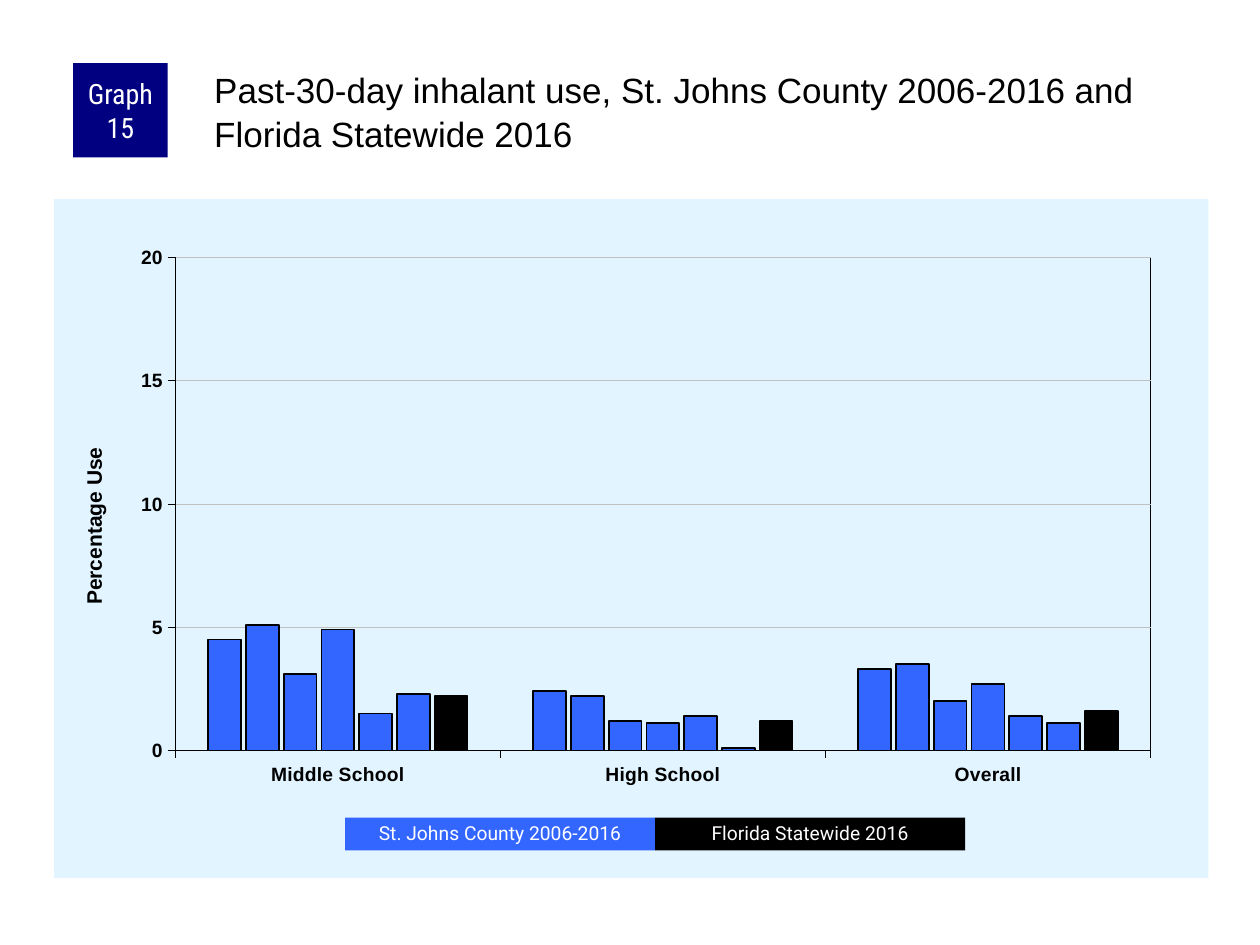
from lxml.etree import fromstring
from pptx import Presentation
from pptx.chart.data import CategoryChartData
from pptx.dml.color import RGBColor
from pptx.enum.chart import XL_CHART_TYPE, XL_TICK_MARK
from pptx.enum.shapes import MSO_SHAPE
from pptx.enum.text import MSO_ANCHOR, PP_ALIGN
from pptx.oxml.ns import nsdecls, qn
from pptx.util import Inches, Pt

BLACK = RGBColor(0, 0, 0)
WHITE = RGBColor(255, 255, 255)
NAVY = RGBColor(0, 0, 0x80)
BLUE = RGBColor(0x33, 0x66, 0xFF)
PALE_BLUE = RGBColor(0xE1, 0xF4, 0xFF)
GREY = RGBColor(0xC0, 0xC0, 0xC0)

TITLE = "Past-30-day inhalant use, St. Johns County 2006-2016 and Florida Statewide 2016"
LEVELS = ["Middle School", "High School", "Overall"]
USE = [
    (4.5, 2.4, 3.3),
    (5.1, 2.2, 3.5),
    (3.1, 1.2, 2.0),
    (4.9, 1.1, 2.7),
    (1.5, 1.4, 1.4),
    (2.3, 0.1, 1.1),
    (2.2, 1.2, 1.6),
]
COLORS = [BLUE] * 6 + [BLACK]
LEGEND = [("St. Johns County 2006-2016", BLUE), ("Florida Statewide 2016", BLACK)]
KEY_LEFT, KEY_WIDTH = 2.74, 2.46


def add_label(slide, text, box, color, font_name, size):
    label = slide.shapes.add_shape(MSO_SHAPE.RECTANGLE, *map(Inches, box))
    label.shadow.inherit = False
    label.fill.solid()
    label.fill.fore_color.rgb = color
    label.line.fill.background()
    frame = label.text_frame
    frame.word_wrap = True
    frame.vertical_anchor = MSO_ANCHOR.MIDDLE
    frame.margin_left = frame.margin_right = Inches(0.05)
    frame.margin_top = frame.margin_bottom = 0
    paragraph = frame.paragraphs[0]
    paragraph.text = text
    paragraph.alignment = PP_ALIGN.CENTER
    set_font(paragraph.font, font_name, size, WHITE)
    return paragraph


def set_font(font, name, size, color=BLACK, bold=False):
    font.name, font.size, font.bold = name, Pt(size), bold
    font.color.rgb = color


def set_line(line, color, width):
    line.color.rgb = color
    line.width = Pt(width)


def set_layout(parent, index, **places):
    """Place a chart part by fractions of the chart's size."""
    old = parent.find(qn("c:layout"))
    if old is not None:
        parent.remove(old)
    target = '<c:layoutTarget val="inner"/>' if "w" in places else ""
    modes = "".join(f'<c:{key}Mode val="edge"/>' for key in "xy")
    values = "".join(f'<c:{key} val="{value}"/>' for key, value in places.items())
    parent.insert(index, fromstring(
        f'<c:layout {nsdecls("c")}><c:manualLayout>{target}{modes}{values}'
        "</c:manualLayout></c:layout>"))


def area_format(fill, line):
    return fromstring(f'<c:spPr {nsdecls("c", "a")}>{fill}{line}</c:spPr>')


def solid(color):
    return f'<a:solidFill><a:srgbClr val="{color}"/></a:solidFill>'


def add_use_chart(slide):
    data = CategoryChartData(number_format="0.0")
    data.categories = LEVELS
    for number, values in enumerate(USE, 1):
        data.add_series(f"Series {number}", values)
    box = map(Inches, (0.43, 1.58, 9.16, 5.39))
    chart = slide.shapes.add_chart(XL_CHART_TYPE.COLUMN_CLUSTERED, *box, data).chart
    chart.has_legend = chart.has_title = False
    set_font(chart.font, "Arial", 8)

    plot = chart.plots[0]
    plot.gap_width, plot.overlap, plot.vary_by_categories = 200, -15, False
    for series, color in zip(plot.series, COLORS):
        series.format.fill.solid()
        series.format.fill.fore_color.rgb = color
        series.invert_if_negative = False
        set_line(series.format.line, BLACK, 1)

    for axis in (chart.category_axis, chart.value_axis):
        set_font(axis.tick_labels.font, "Arial", 11, bold=True)
        set_line(axis.format.line, BLACK, 0.25)
        axis.major_tick_mark = XL_TICK_MARK.OUTSIDE
        axis.minor_tick_mark = XL_TICK_MARK.NONE

    percent = chart.value_axis
    percent.minimum_scale, percent.maximum_scale, percent.major_unit = 0, 20, 5
    percent.tick_labels.number_format = "0"
    percent.tick_labels.number_format_is_linked = False
    set_line(percent.major_gridlines.format.line, GREY, 0.25)
    caption = percent.axis_title.text_frame.paragraphs[0]
    caption.text = "Percentage Use"
    set_font(caption.font, "Arial", 12, bold=True)
    percent.axis_title.text_frame._txBody.bodyPr.set("rot", "-5400000")
    set_layout(percent.axis_title._element, 1, x=0.02, y=0.36)

    body = chart._chartSpace.find(qn("c:chart"))
    plot_area = body.find(qn("c:plotArea"))
    set_layout(plot_area, 0, x=0.105, y=0.086, w=0.845, h=0.726)
    border = f'<a:ln w="{Pt(0.25)}">{solid(BLACK)}</a:ln>'
    plot_area.append(area_format("<a:noFill/>", border))
    body.addnext(area_format(solid(PALE_BLUE), "<a:ln><a:noFill/></a:ln>"))


def add_title(slide):
    title = slide.shapes.title
    title.left, title.top, title.width, title.height = map(Inches, (1.67, 0.5, 7.92, 0.83))
    frame = title.text_frame
    frame.word_wrap = True
    frame.vertical_anchor = MSO_ANCHOR.TOP
    frame.margin_left = frame.margin_top = Inches(0.03)
    frame.margin_right = frame.margin_bottom = 0
    paragraph = frame.paragraphs[0]
    paragraph.text = TITLE
    paragraph.alignment = PP_ALIGN.LEFT
    paragraph.line_spacing = 1.05
    set_font(paragraph.font, "Arial", 20)


def main():
    deck = Presentation()
    deck.slide_width, deck.slide_height = Inches(10), Inches(7.5)
    slide = deck.slides.add_slide(deck.slide_layouts[5])
    add_use_chart(slide)
    add_label(slide, "Graph 15", (0.58, 0.5, 0.75, 0.75), NAVY, "Roboto Condensed", 16)
    add_title(slide)
    for column, (text, color) in enumerate(LEGEND):
        box = (KEY_LEFT + column * KEY_WIDTH, 6.49, KEY_WIDTH, 0.26)
        add_label(slide, text, box, color, "Roboto", 11).line_spacing = 0.9
    deck.save("out.pptx")


if __name__ == "__main__":
    main()
